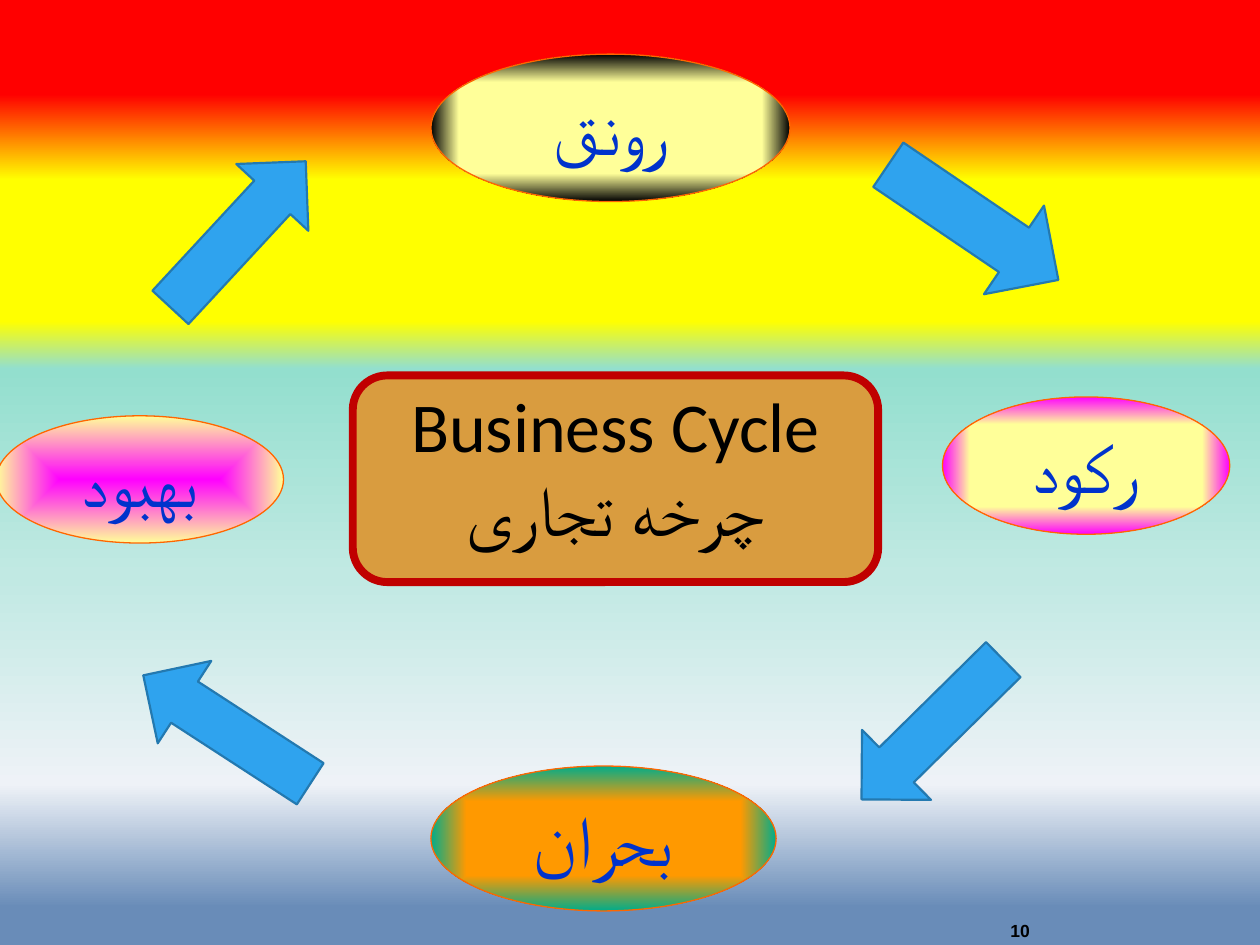
from dataclasses import dataclass

from lxml import etree
from pptx import Presentation
from pptx.dml.color import RGBColor
from pptx.enum.shapes import MSO_SHAPE as Shape
from pptx.enum.text import MSO_ANCHOR as Anchor, PP_ALIGN as Align
from pptx.oxml.ns import nsdecls, qn
from pptx.util import Inches, Pt


@dataclass(frozen=True)
class Theme:
    phase_text: str = "0033CC"
    phase_line: str = "FF6600"
    arrow_fill: str = "2FA3EE"
    arrow_line: str = "2379B0"
    title_fill: str = "D99C3F"
    title_line: str = "C00000"
    black: str = "000000"
    yellow: str = "FFFF99"
    magenta: str = "FF00FF"
    orange: str = "FF9900"
    teal: str = "00AC8B"
    sky: tuple = ((10, "FF0000"), (19, "FFFF00"), (34, "FFFF00"), (39, "93DFCE"),
                  (61, "C1E9E3"), (83, "EEF2F7"), (96, "698CB8"))
    large: int = 40
    small: int = 10


theme = Theme()
LINEAR_DOWN = '<a:lin ang="5400000" scaled="0"/>'
FROM_CENTRE = ('<a:path path="shape"><a:fillToRect l="50000" t="50000" '
               'r="50000" b="50000"/></a:path>')


def set_gradient(holder, stops, shade):
    """Swap the solid fill inside holder for a gradient."""
    stop_xml = "".join(f'<a:gs pos="{pos * 1000}"><a:srgbClr val="{color}"/></a:gs>'
                       for pos, color in stops)
    gradient = etree.fromstring(f'<a:gradFill {nsdecls("a")} rotWithShape="1">'
                                f'<a:gsLst>{stop_xml}</a:gsLst>{shade}</a:gradFill>')
    holder.replace(holder.find(qn("a:solidFill")), gradient)


def add_figure(kind, place, fill, line, width, text="", font="Arial", color=theme.black):
    """Add a filled, outlined shape with optional centred text."""
    shape = slide.shapes.add_shape(kind, *map(Inches, place))
    shape.shadow.inherit = False
    shape.fill.solid()
    shape.fill.fore_color.rgb = RGBColor.from_string(fill)
    shape.line.color.rgb = RGBColor.from_string(line)
    shape.line.width = Pt(width)
    if text:
        frame = shape.text_frame
        frame.text = text
        frame.vertical_anchor = Anchor.MIDDLE
        para = frame.paragraphs[0]
        para.alignment = Align.CENTER
        span = para.runs[0]
        span.font.name = font
        span.font.size = Pt(theme.large)
        span.font.color.rgb = RGBColor.from_string(color)
    return shape


deck = Presentation()
deck.slide_width, deck.slide_height = Inches(10), Inches(7.5)
slide = deck.slides.add_slide(deck.slide_layouts[6])

# Background
slide.background.fill.solid()
set_gradient(slide.element.find(".//" + qn("p:bgPr")), theme.sky, LINEAR_DOWN)

# Page number
box = slide.shapes.add_textbox(Inches(7.92), Inches(7.25), Inches(2.08), Inches(0.25))
box.text_frame.word_wrap = True
box.text_frame.text = "10"
span = box.text_frame.paragraphs[0].runs[0]
span.font.name = "Arial"
span.font.size = Pt(theme.small)
span.font.bold = True
span.font.color.rgb = RGBColor.from_string(theme.black)

# Phases of the cycle
phases = [
    ("بهبود", (-0.03, 3.3, 2.28, 1.01), ((0, theme.magenta), (100, theme.yellow))),
    ("بحران", (3.42, 6.08, 2.74, 1.15),
     ((0, theme.orange), (51, theme.orange), (100, theme.teal))),
    ("رکود", (7.48, 3.15, 2.28, 1.09),
     ((0, theme.yellow), (60, theme.yellow), (100, theme.magenta))),
    ("رونق", (3.42, 0.43, 2.85, 1.17), ((62, theme.yellow), (100, theme.black))),
]
for name, place, stops in phases:
    phase = add_figure(Shape.OVAL, place, theme.yellow, theme.phase_line, 0.75,
                       name, color=theme.phase_text)
    phase.text_frame.word_wrap = False
    set_gradient(phase.element.spPr, stops, FROM_CENTRE)

# Arrows between the phases
arrows = [
    ((6.61, 5.4, 1.58, 0.78), 135.4),
    ((6.91, 1.34, 1.63, 0.85), 34.1),
    ((1.1, 1.47, 1.58, 0.78), 312.8),
    ((1.01, 5.4, 1.58, 0.78), 213),
]
for place, angle in arrows:
    arrow = add_figure(Shape.RIGHT_ARROW, place, theme.arrow_fill, theme.arrow_line, 1.25)
    arrow.rotation = angle

# Title in the middle, lifted slightly by the bottom inset
title = add_figure(Shape.ROUNDED_RECTANGLE, (2.8, 2.98, 4.17, 1.64), theme.title_fill,
                   theme.title_line, 4.5, "Business Cycle چرخه تجاری", "Calibri")
title.text_frame.word_wrap = True
title.text_frame.margin_bottom = Inches(0.25)

deck.save("out.pptx")
